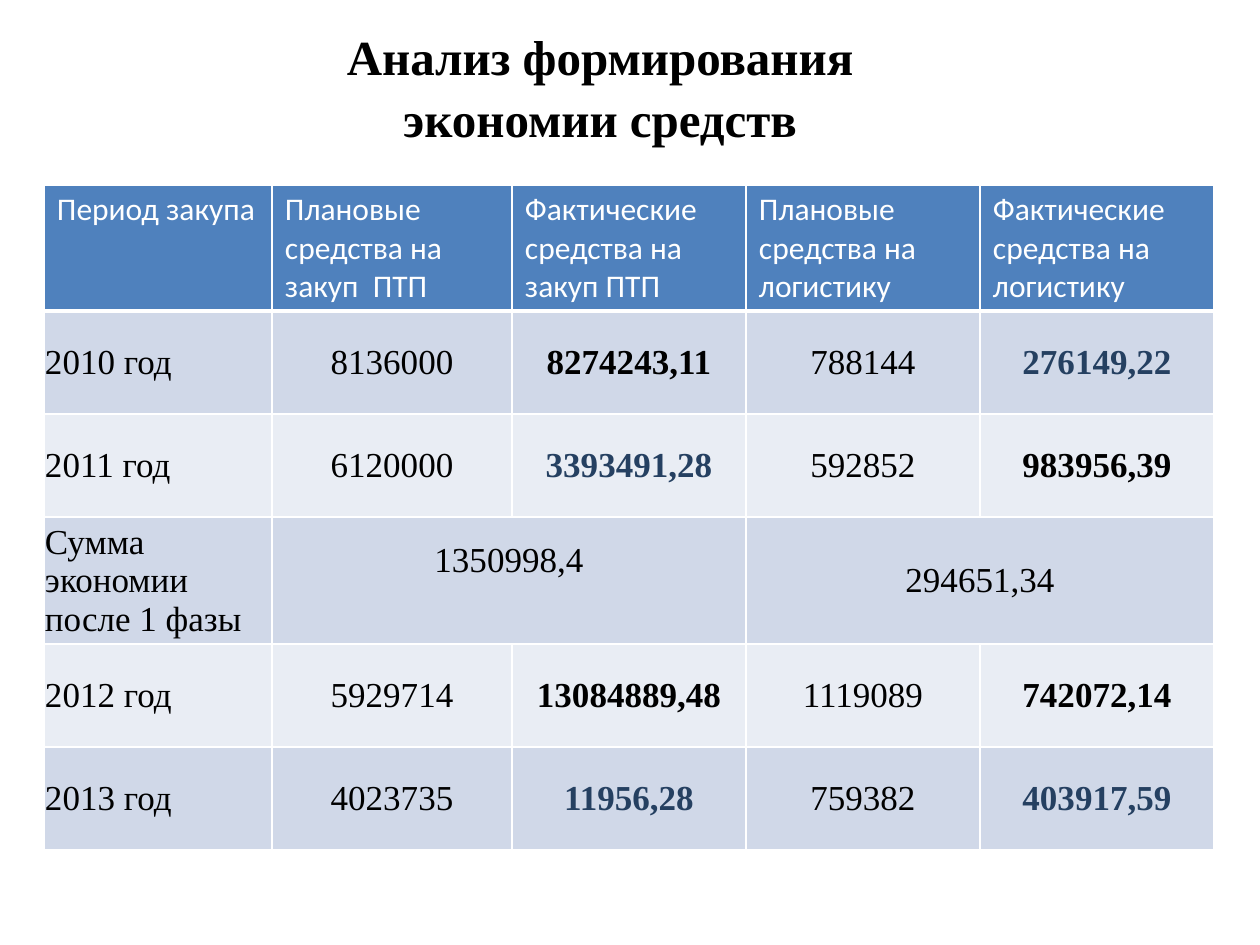
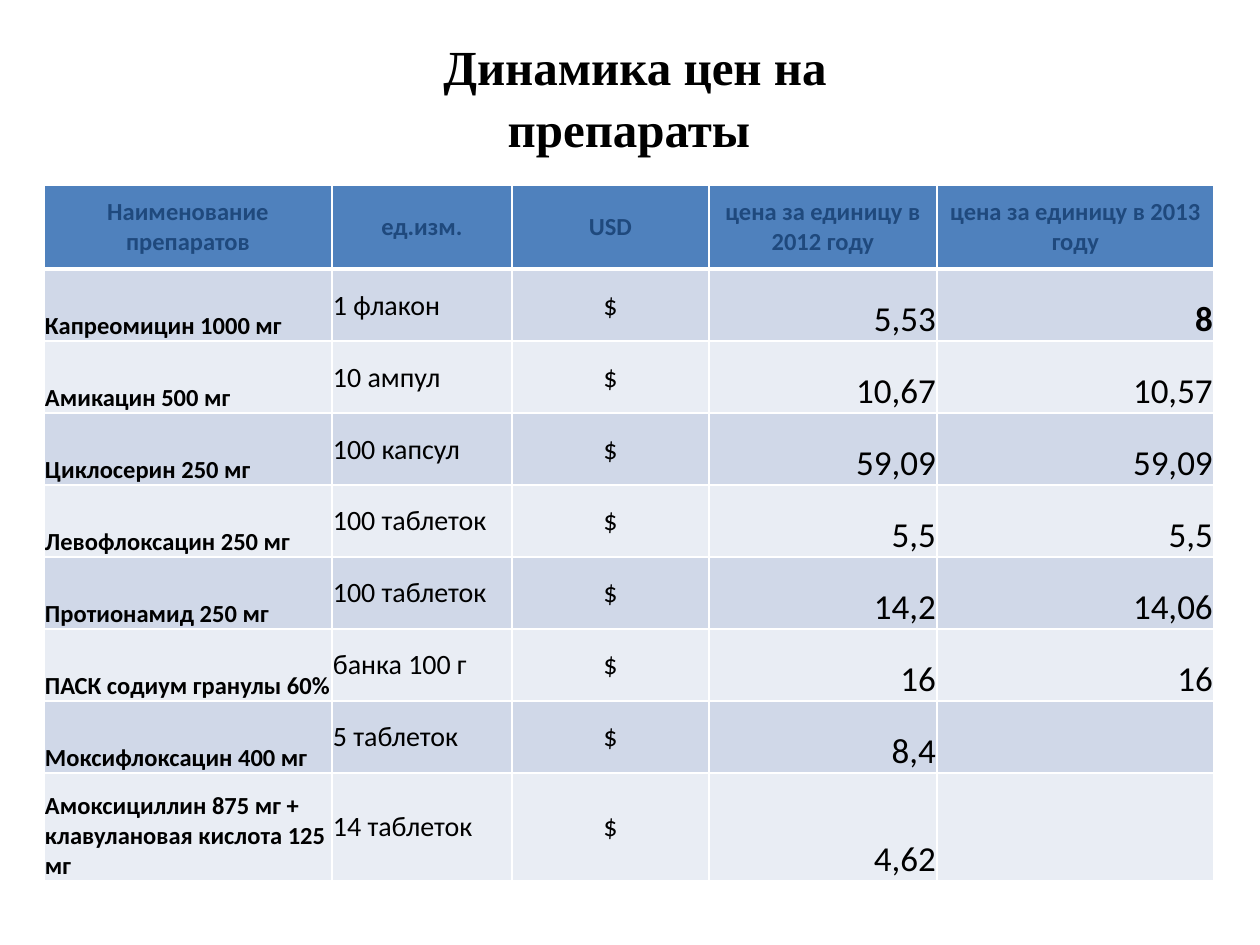
from collections import namedtuple

from lxml import etree
from pptx import Presentation
from pptx.dml.color import RGBColor
from pptx.enum.text import MSO_ANCHOR, PP_ALIGN
from pptx.oxml.ns import qn
from pptx.util import Emu, Pt

LEFT, CENTER, RIGHT = PP_ALIGN.LEFT, PP_ALIGN.CENTER, PP_ALIGN.RIGHT
TOP, MIDDLE, BOTTOM = MSO_ANCHOR.TOP, MSO_ANCHOR.MIDDLE, MSO_ANCHOR.BOTTOM

SCALE = 914400 / 126
SERIF, SANS = "Times New Roman", "Calibri"
BLACK, WHITE, NAVY, INK = "000000", "FFFFFF", "254061", "1F497D"
HEAD, BANDS = "4F81BD", ("D0D8E8", "E9EDF4")
TIGHT, WIDE = (1, 1, 1, 0), (13, 6, 13, 6)
LIFTED = (1, 1, 1, 40)

Style = namedtuple("Style", "font size color bold align anchor pad",
                   defaults=(BLACK, False, LEFT, MIDDLE, TIGHT))

TITLE = Style(SERIF, 28, bold=True, align=CENTER)
FUND_HEAD = Style(SANS, 18, WHITE, anchor=TOP, pad=WIDE)
PERIOD = Style(SERIF, 20)
PLAN = PERIOD._replace(align=CENTER)
FACT = PLAN._replace(bold=True)
SAVED = FACT._replace(color=NAVY)
PRICE_HEAD = Style(SANS, 14, INK, True, CENTER)
DRUG = Style(SANS, 14, bold=True, anchor=BOTTOM)
UNIT = Style(SANS, 16)
MONEY = UNIT._replace(align=CENTER)
PRICE = Style(SANS, 20, align=RIGHT, anchor=BOTTOM)

FUNDS = [
    ["Период закупа", "Плановые средства на закуп  ПТП",
     "Фактические средства на закуп ПТП", "Плановые средства на логистику",
     "Фактические средства на логистику"],
    ["2010 год", "8136000", "8274243,11", "788144", "276149,22"],
    ["2011 год", "6120000", "3393491,28", "592852", "983956,39"],
    ["Сумма экономии после 1 фазы", "1350998,4", "", "294651,34", ""],
    ["2012 год", "5929714", "13084889,48", "1119089", "742072,14"],
    ["2013 год", "4023735", "11956,28", "759382", "403917,59"],
]
SAVINGS = {"276149,22", "3393491,28", "11956,28", "403917,59"}
TOTAL_ROW = 3

PRICES = [
    ["Наименование препаратов", "ед.изм.", "USD",
     "цена за единицу в 2012 году", "цена за единицу в 2013 году"],
    ["Капреомицин 1000 мг", "1 флакон", "$", "5,53", "8"],
    ["Амикацин 500 мг", "10 ампул", "$", "10,67", "10,57"],
    ["Циклосерин 250 мг", "100 капсул", "$", "59,09", "59,09"],
    ["Левофлоксацин 250 мг", "100 таблеток", "$", "5,5", "5,5"],
    ["Протионамид 250 мг", "100 таблеток", "$", "14,2", "14,06"],
    ["ПАСК содиум гранулы 60%", "банка 100 г", "$", "16", "16"],
    ["Моксифлоксацин 400 мг", "5 таблеток", "$", "8,4", ""],
    ["Амоксициллин 875 мг + клавулановая кислота 125 мг", "14 таблеток",
     "$", "4,62", ""],
]


def px(n):
    """Turn px into EMU."""
    return Emu(round(n * SCALE))


def rgb(code):
    """Turn a hex string into a colour."""
    return RGBColor.from_string(code)


def write(para, text, style):
    """Put styled text into a paragraph."""
    para.text = text
    para.alignment = style.align
    font = para.font
    font.name, font.size, font.bold = style.font, Pt(style.size), style.bold
    font.color.rgb = rgb(style.color)


def add_title(slide, text, x, y, w, h):
    """Add a centred slide title."""
    frame = slide.shapes.add_textbox(px(x), px(y), px(w), px(h)).text_frame
    frame.word_wrap = True
    frame.vertical_anchor = TITLE.anchor
    para = frame.paragraphs[0]
    write(para, text, TITLE)
    para.line_spacing = 1.05


def add_edges(cell, base):
    """Draw white cell borders, with the bottom one of given width."""
    props = cell._tc.get_or_add_tcPr()
    for side, width in zip("LRTB", (1, 1, 1, base)):
        line = etree.SubElement(props, qn("a:ln" + side), w=str(Pt(width)))
        fill = etree.SubElement(line, qn("a:solidFill"))
        etree.SubElement(fill, qn("a:srgbClr"), val=WHITE)


def fill_cell(cell, text, style, row):
    """Style one cell by its row and write its text."""
    add_edges(cell, 1 if row else 3)
    cell.fill.solid()
    cell.fill.fore_color.rgb = rgb(BANDS[(row - 1) % 2] if row else HEAD)
    cell.vertical_anchor = style.anchor
    (cell.margin_left, cell.margin_top,
     cell.margin_right, cell.margin_bottom) = map(px, style.pad)
    write(cell.text_frame.paragraphs[0], text, style)


def add_grid(slide, data, cols, rows, pick):
    """Add a banded table, with the style of each cell from pick."""
    table = slide.shapes.add_table(
        len(rows), len(cols), px(44), px(185),
        px(sum(cols)), px(sum(rows))).table
    table.first_row = table.horz_banding = False
    for col, width in zip(table.columns, cols):
        col.width = px(width)
    for line, height in zip(table.rows, rows):
        line.height = px(height)
    for r, texts in enumerate(data):
        for c, text in enumerate(texts):
            fill_cell(table.cell(r, c), text, pick(r, c, text), r)
    return table


def pick_fund(row, col, text):
    """Choose the style of a funds cell."""
    if row == 0:
        return FUND_HEAD
    if row == TOTAL_ROW and col == 1:
        return PLAN._replace(pad=LIFTED)
    if text in SAVINGS:
        return SAVED
    return (PERIOD, PLAN, FACT, PLAN, FACT)[col]


def pick_price(row, col, text):
    """Choose the style of a prices cell."""
    if row == 0:
        return PRICE_HEAD
    style = (DRUG, UNIT, MONEY, PRICE, PRICE)[col]
    return style._replace(bold=True) if text == "8" else style


def add_funds(slide):
    """Build the slide on savings."""
    add_title(slide, "Анализ формирования экономии средств", 312, 27, 576, 117)
    table = add_grid(slide, FUNDS, [228, 240] + [234] * 3,
                     [126, 103, 103, 127, 103, 103], pick_fund)
    for col in (1, 3):
        table.cell(TOTAL_ROW, col).merge(table.cell(TOTAL_ROW, col + 1))


def add_prices(slide):
    """Build the slide on drug prices."""
    add_title(slide, "Динамика цен на препараты ", 342, 37, 586, 117)
    add_grid(slide, PRICES, [288, 180, 197, 228, 277],
             [84] + [72] * 7 + [108], pick_price)


def main():
    """Build and save the deck."""
    deck = Presentation()
    deck.slide_width, deck.slide_height = px(1260), px(945)
    blank = deck.slide_layouts[6]
    for build in (add_funds, add_prices):
        build(deck.slides.add_slide(blank))
    deck.save("out.pptx")


if __name__ == "__main__":
    main()
